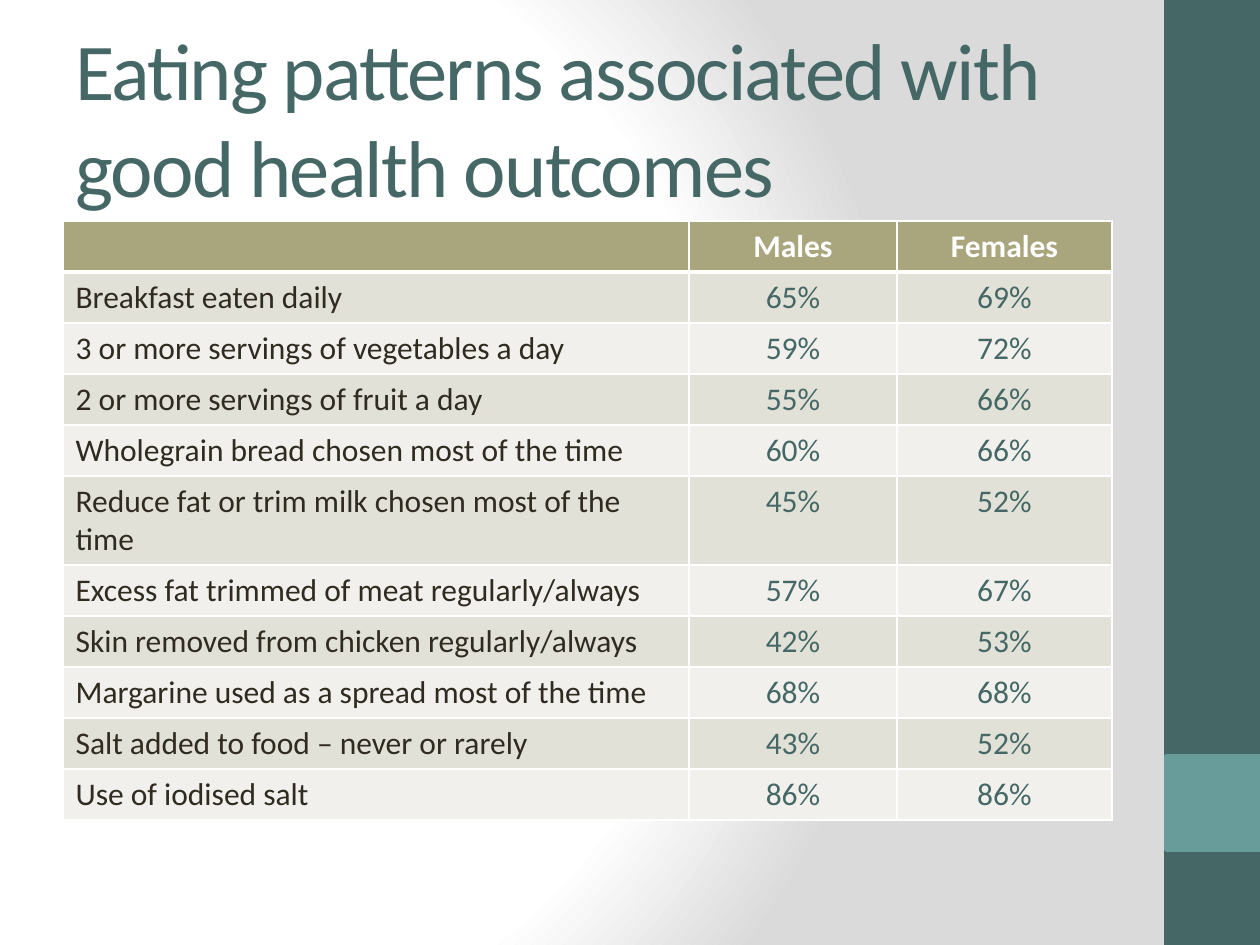
from pptx import Presentation
from pptx.dml.color import RGBColor
from pptx.enum.shapes import MSO_SHAPE
from pptx.enum.text import MSO_ANCHOR, PP_ALIGN
from pptx.oxml import parse_xml
from pptx.oxml.ns import nsdecls, qn
from pptx.util import Emu, Pt

FONT = "Calibri"
COLORS = {
    "white": "FFFFFF",
    "grey": "DADADA",
    "teal": "456867",
    "light_teal": "689C9A",
    "olive": "A9A57C",
    "dark_band": "E2E1D7",
    "light_band": "F1F0EC",
    "ink": "2F2B20",
}
ROWS = [
    ("", "Males", "Females"),
    ("Breakfast eaten daily", "65%", "69%"),
    ("3 or more servings of vegetables a day", "59%", "72%"),
    ("2 or more servings of fruit a day", "55%", "66%"),
    ("Wholegrain bread chosen most of the time", "60%", "66%"),
    ("Reduce fat or trim milk chosen most of the time", "45%", "52%"),
    ("Excess fat trimmed of meat regularly/always", "57%", "67%"),
    ("Skin removed from chicken regularly/always", "42%", "53%"),
    ("Margarine used as a spread most of the time", "68%", "68%"),
    ("Salt added to food – never or rarely", "43%", "52%"),
    ("Use of iodised salt", "86%", "86%"),
]
COLUMN_WIDTHS = [626, 208, 215]
ROW_HEIGHTS = [89 if row[0].startswith("Reduce") else 51 for row in ROWS]


def px(length):
    return Emu(round(length * 914400 / 126))


def add_run(paragraph, text, size, color, bold=False):
    run = paragraph.add_run()
    run.text = text
    run.font.name = FONT
    run.font.size = Pt(size)
    run.font.bold = bold
    run.font.color.rgb = RGBColor.from_string(COLORS[color])
    return run


presentation = Presentation()
presentation.slide_width = px(1260)
presentation.slide_height = px(945)
slide = presentation.slides.add_slide(presentation.slide_layouts[6])

slide.background.fill.solid()
plain_fill = slide._element.find(".//" + qn("a:solidFill"))
stops = "".join(
    f'<a:gs pos="{position}"><a:srgbClr val="{COLORS[color]}"/></a:gs>'
    for position, color in [(0, "white"), (75000, "white"), (100000, "grey")]
)
gradient = parse_xml(
    f'<a:gradFill {nsdecls("a")} rotWithShape="1"><a:gsLst>{stops}</a:gsLst>'
    '<a:path path="circle"><a:fillToRect l="20000" t="50000" r="100000" b="50000"/>'
    "</a:path></a:gradFill>"
)
plain_fill.getparent().replace(plain_fill, gradient)

for top, height, color in [(0, 945, "teal"), (756, 94, "light_teal")]:
    shape = slide.shapes.add_shape(
        MSO_SHAPE.RECTANGLE, px(1166), px(top), px(94), px(height)
    )
    shape.shadow.inherit = False
    shape.fill.solid()
    shape.fill.fore_color.rgb = RGBColor.from_string(COLORS[color])
    shape.line.color.rgb = RGBColor.from_string(COLORS[color])
    shape.line.width = Pt(2)

title = slide.shapes.add_textbox(px(63), px(38), px(1050), px(158))
title.text_frame.word_wrap = True
title.text_frame.vertical_anchor = MSO_ANCHOR.MIDDLE
title_run = add_run(
    title.text_frame.paragraphs[0],
    "Eating patterns associated with good health outcomes",
    46,
    "teal",
)
title_run.font._element.set("spc", "-100")

table = slide.shapes.add_table(
    len(ROWS), len(COLUMN_WIDTHS), px(63), px(221),
    px(sum(COLUMN_WIDTHS)), px(sum(ROW_HEIGHTS)),
).table
table.first_row = False
table.horz_banding = False
for column, width in zip(table.columns, COLUMN_WIDTHS):
    column.width = px(width)

for row_index, (texts, height) in enumerate(zip(ROWS, ROW_HEIGHTS)):
    table.rows[row_index].height = px(height)
    header = row_index == 0
    band = "olive" if header else "dark_band" if row_index % 2 else "light_band"
    border_widths = {
        "lnL": 1,
        "lnR": 1,
        "lnT": 3 if row_index == 1 else 1,
        "lnB": 3 if header else 1,
    }
    for column_index, text in enumerate(texts):
        cell = table.cell(row_index, column_index)
        properties = cell._tc.get_or_add_tcPr()
        for side, width in border_widths.items():
            properties.append(parse_xml(
                f'<a:{side} {nsdecls("a")} w="{Pt(width)}"><a:solidFill>'
                f'<a:srgbClr val="{COLORS["white"]}"/></a:solidFill></a:{side}>'
            ))
        cell.fill.solid()
        cell.fill.fore_color.rgb = RGBColor.from_string(COLORS[band])
        paragraph = cell.text_frame.paragraphs[0]
        if column_index:
            paragraph.alignment = PP_ALIGN.CENTER
        if text:
            color = "white" if header else "teal" if column_index else "ink"
            add_run(paragraph, text, 18, color, header)

presentation.save("out.pptx")
